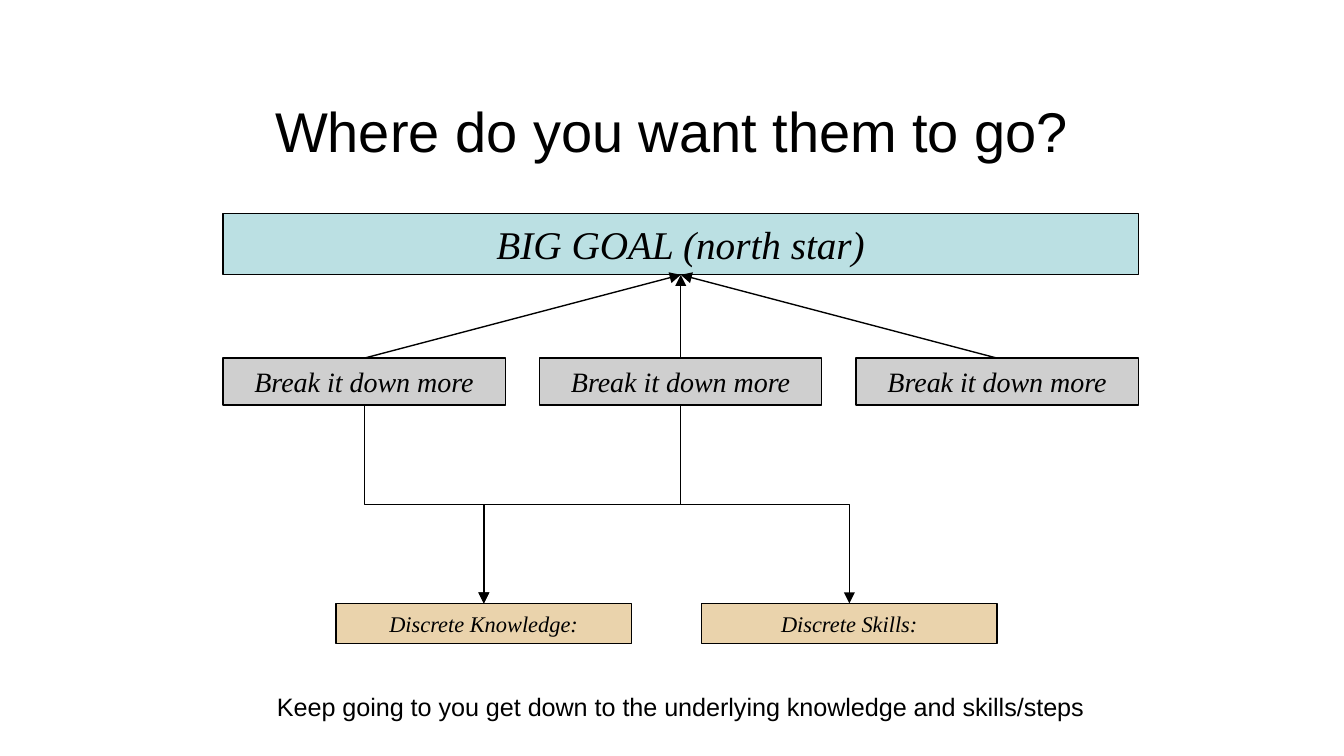
from dataclasses import dataclass

import pptx
import pptx.dml.color
import pptx.enum.shapes
import pptx.enum.text
import pptx.oxml.ns
import pptx.util
from lxml import etree
from pptx.shapes.autoshape import Shape
from pptx.shapes.connector import Connector
from pptx.slide import Slide

CELL = 0.1  # inches per grid column and row
COLUMNS, ROWS = 100, 56.25
MARGIN, CONTENT_WIDTH = 16.6, 68.1
STEP_COUNT, STEP_WIDTH = 3, 21
STEP_PITCH = (CONTENT_WIDTH - STEP_WIDTH) / (STEP_COUNT - 1)
LEAF_LEFT, LEAF_WIDTH, LEAF_PITCH = 25, 22, 27.2
SANS, SERIF = "Arial", "Times New Roman"
BLACK = "000000"
TOP, BOTTOM = 0, 2


@dataclass(frozen=True)
class Level:
    """Look of the boxes on one level of the goal tree."""
    row: float
    height: float
    fill: str
    size: float


GOAL = Level(15.9, 4.55, "BBE0E3", 21)
STEP = Level(26.65, 3.5, "CFCFCF", 15)
LEAF = Level(44.9, 3.0, "EAD3AC", 12)


def grid(cells: float) -> int:
    return pptx.util.Inches(cells * CELL)


def color(hex_code: str) -> pptx.dml.color.RGBColor:
    return pptx.dml.color.RGBColor.from_string(hex_code)


def write(holder: Shape, words: str, font: str, size: float,
          italic: bool = False, middle: bool = False) -> None:
    frame = holder.text_frame
    frame.word_wrap = True
    anchors = pptx.enum.text.MSO_ANCHOR
    frame.vertical_anchor = anchors.MIDDLE if middle else anchors.TOP
    frame.text = words
    paragraph = frame.paragraphs[0]
    paragraph.alignment = pptx.enum.text.PP_ALIGN.CENTER
    for run in paragraph.runs:
        run.font.name = font
        run.font.size = pptx.util.Pt(size)
        run.font.italic = italic
        run.font.color.rgb = color(BLACK)


def add_caption(slide: Slide, column: float, row: float, width: float, height: float,
                words: str, size: float) -> None:
    caption = slide.shapes.add_textbox(grid(column), grid(row), grid(width), grid(height))
    write(caption, words, SANS, size, middle=True)


def add_box(slide: Slide, level: Level, column: float, width: float, words: str) -> Shape:
    box = slide.shapes.add_shape(
        pptx.enum.shapes.MSO_SHAPE.RECTANGLE,
        grid(column), grid(level.row), grid(width), grid(level.height))
    box.shadow.inherit = False
    box.fill.solid()
    box.fill.fore_color.rgb = color(level.fill)
    box.line.color.rgb = color(BLACK)
    box.line.width = pptx.util.Pt(0.75)
    write(box, words, SERIF, level.size, italic=True)
    return box


def style_arrow(arrow: Connector) -> None:
    arrow.line.color.rgb = color(BLACK)
    arrow.line.width = pptx.util.Pt(0.75)
    qn = pptx.oxml.ns.qn
    etree.SubElement(arrow.line._get_or_add_ln(), qn("a:tailEnd"), type="triangle")
    etree.SubElement(arrow._element.spPr, qn("a:effectLst"))


def add_straight_arrow(slide: Slide, source: Shape, target: Shape) -> None:
    arrow = slide.shapes.add_connector(
        pptx.enum.shapes.MSO_CONNECTOR.STRAIGHT, 0, 0, 0, 0)
    arrow.begin_connect(source, TOP)
    arrow.end_connect(target, BOTTOM)
    style_arrow(arrow)


def add_elbow_arrow(slide: Slide, source: Shape, target: Shape) -> None:
    """Go down, across and down: an elbow turned by a quarter about its centre."""
    begin_x, begin_y = source.left + source.width // 2, source.top + source.height
    end_x, end_y = target.left + target.width // 2, target.top
    length, spread = end_y - begin_y, abs(end_x - begin_x)
    left = (begin_x + end_x - length) // 2
    top = (begin_y + end_y - spread) // 2
    arrow = slide.shapes.add_connector(
        pptx.enum.shapes.MSO_CONNECTOR.ELBOW, left, top, left + length, top + spread)
    goes_right = end_x > begin_x
    transform = arrow._element.spPr.xfrm
    transform.set("rot", str((270 if goes_right else 90) * 60000))
    if goes_right:
        transform.set("flipH", "1")
    style_arrow(arrow)


def main() -> None:
    deck = pptx.Presentation()
    deck.slide_width, deck.slide_height = grid(COLUMNS), grid(ROWS)
    slide = deck.slides.add_slide(deck.slide_layouts[6])

    add_caption(slide, 7.5, 5, 85, 9.4, "Where do you want them to go?", 30)
    goal = add_box(slide, GOAL, MARGIN, CONTENT_WIDTH, "BIG GOAL (north star)")
    steps = [add_box(slide, STEP, MARGIN + i * STEP_PITCH, STEP_WIDTH, "Break it down more")
             for i in range(STEP_COUNT)]
    knowledge, skills = [
        add_box(slide, LEAF, LEAF_LEFT + i * LEAF_PITCH, LEAF_WIDTH, words)
        for i, words in enumerate(("Discrete Knowledge:", "Discrete Skills:"))]

    for step in steps:
        add_straight_arrow(slide, step, goal)
    first, second, _ = steps
    for source, target in ((first, knowledge), (second, skills), (second, knowledge)):
        add_elbow_arrow(slide, source, target)

    add_caption(slide, MARGIN, 50.9, CONTENT_WIDTH, 3.3,
                "Keep going to you get down to the underlying knowledge and skills/steps", 13.5)
    deck.save("out.pptx")


if __name__ == "__main__":
    main()
